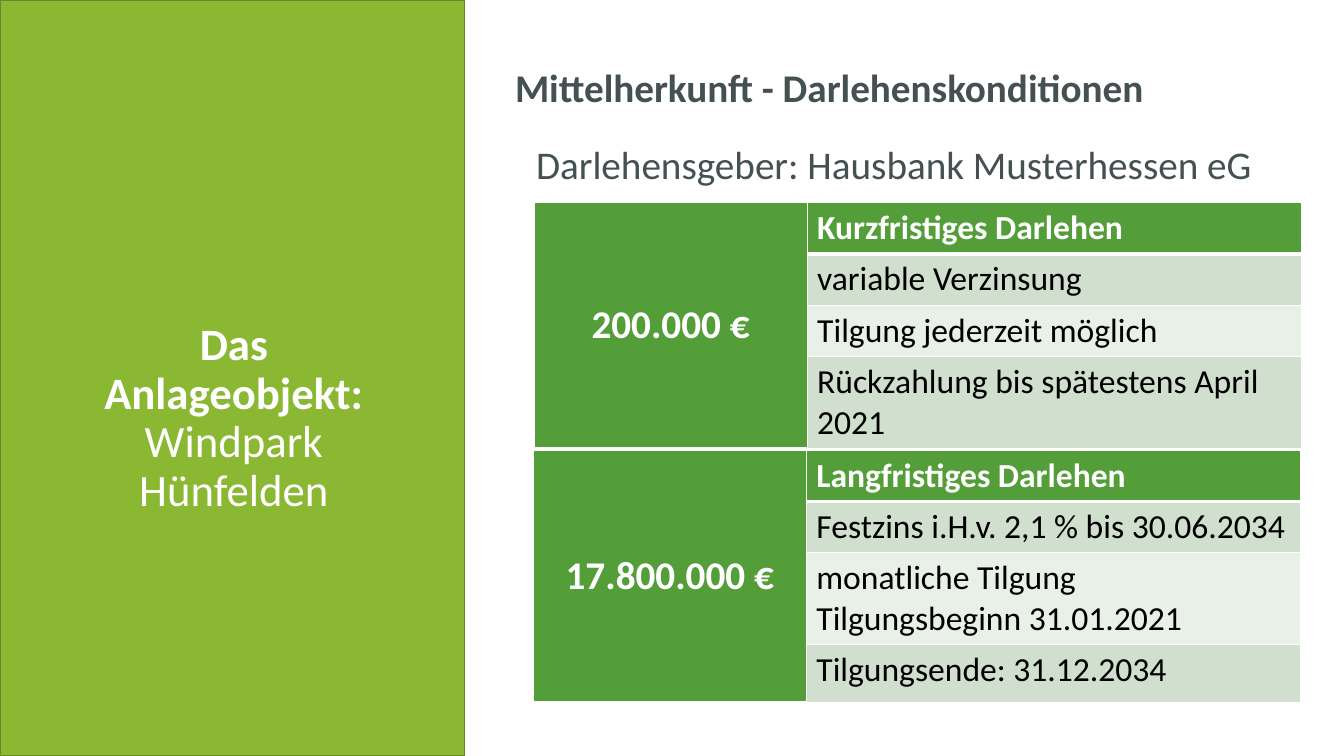
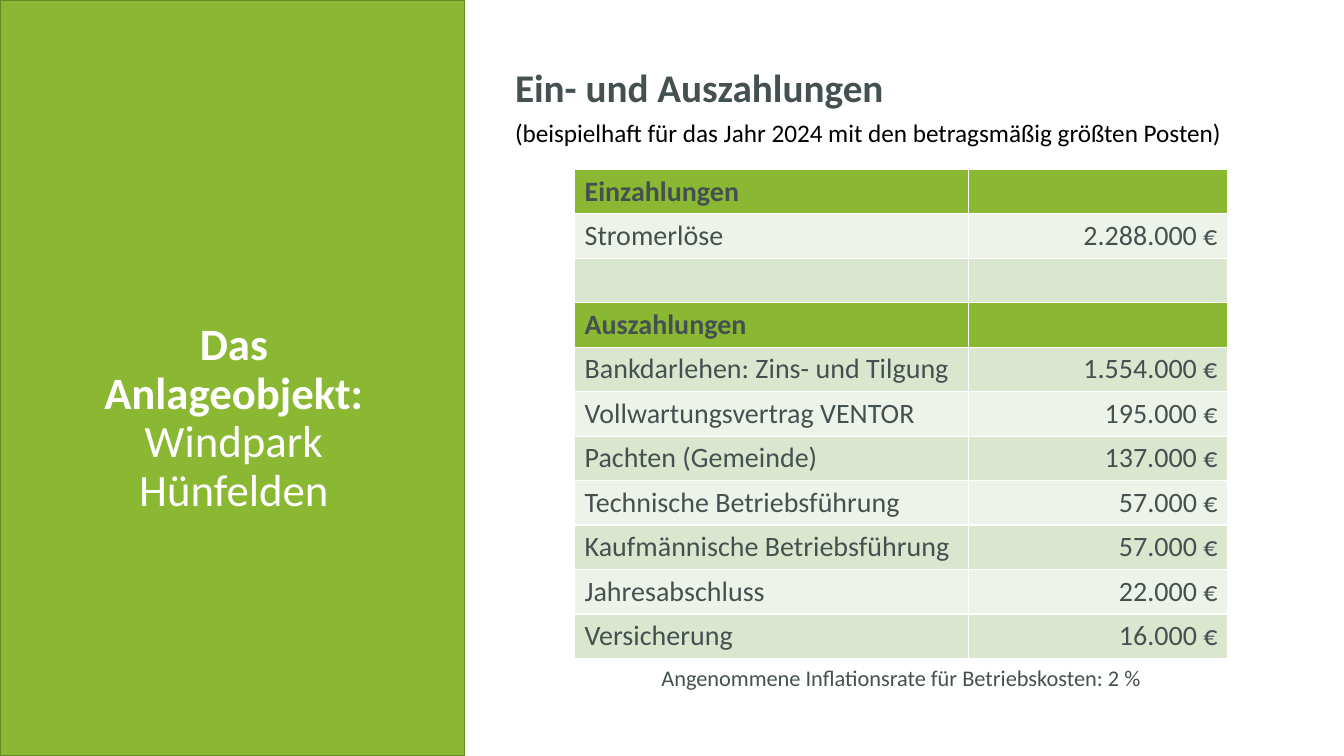
from dataclasses import dataclass

from lxml import etree
from pptx import Presentation
from pptx.dml.color import RGBColor
from pptx.enum import shapes, text
from pptx.oxml import ns
from pptx import util as u


@dataclass(frozen=True)
class Theme:
    font: str = "Calibri"
    lime: str = "8AB833"
    lime_line: str = "668826"
    lime_bands: tuple = ("DAE6CE", "EDF3E8")
    green: str = "549E39"
    green_bands: tuple = ("E9F0E8", "D1DFCE")
    slate: str = "455051"
    white: str = "FFFFFF"
    black: str = "000000"
    panel_size: int = 32
    heading_size: int = 28
    loan_size: int = 24
    payment_size: int = 20
    subtitle_size: int = 18
    note_size: int = 16
    tight: float = 0.9
    rule: int = 1
    thick_rule: int = 3


THEME = Theme()
LEFT = text.PP_ALIGN.LEFT
CENTER = text.PP_ALIGN.CENTER
RIGHT = text.PP_ALIGN.RIGHT
MIDDLE = text.MSO_ANCHOR.MIDDLE
TOP = text.MSO_ANCHOR.TOP

LOANS = [
    (13.46, 5.11, (1.29, 1.29, 1.29, 2.32), "200.000 €", [
        "Kurzfristiges Darlehen",
        "variable Verzinsung",
        "Tilgung jederzeit möglich",
        "Rückzahlung bis spätestens April 2021",
    ]),
    (13.44, 11.35, (1.29, 1.29, 2.32, 1.46), "17.800.000 €", [
        "Langfristiges Darlehen",
        "Festzins i.H.v. 2,1 % bis 30.06.2034",
        "monatliche Tilgung\nTilgungsbeginn 31.01.2021",
        "Tilgungsende: 31.12.2034",
    ]),
]

PAYMENTS = [
    ("Einzahlungen", ""),
    ("Stromerlöse", "2.288.000 €"),
    ("", ""),
    ("Auszahlungen", ""),
    ("Bankdarlehen: Zins- und Tilgung", "1.554.000 €"),
    ("Vollwartungsvertrag VENTOR", "195.000 €"),
    ("Pachten (Gemeinde)", "137.000 €"),
    ("Technische Betriebsführung", "57.000 €"),
    ("Kaufmännische Betriebsführung", "57.000 €"),
    ("Jahresabschluss", "22.000 €"),
    ("Versicherung", "16.000 €"),
]


def rgb(value):
    return RGBColor.from_string(value)


def lengths(*values):
    return [u.Cm(value) for value in values]


def add_run(paragraph, words, size, color, bold=False):
    run = paragraph.add_run()
    run.text = words
    run.font.name = THEME.font
    run.font.size = u.Pt(size)
    run.font.bold = bold
    run.font.color.rgb = rgb(color)


def add_text(slide, box, words, size, color=THEME.slate, bold=False,
             align=LEFT, anchor=TOP, spacing=1.0):
    frame = slide.shapes.add_textbox(*lengths(*box)).text_frame
    frame.word_wrap = True
    frame.vertical_anchor = anchor
    paragraph = frame.paragraphs[0]
    paragraph.alignment = align
    paragraph.line_spacing = spacing
    add_run(paragraph, words, size, color, bold)


def add_heading(slide, words):
    add_text(slide, (12.73, 1.6, 20.29, 1.32), words, THEME.heading_size,
             bold=True, spacing=THEME.tight)


def set_borders(cell, top=THEME.rule, bottom=THEME.rule):
    properties = cell._tc.get_or_add_tcPr()
    widths = {"L": THEME.rule, "R": THEME.rule, "T": top, "B": bottom}
    for side, width in widths.items():
        line = etree.SubElement(properties, ns.qn(f"a:ln{side}"), w=str(u.Pt(width)))
        fill = etree.SubElement(line, ns.qn("a:solidFill"))
        etree.SubElement(fill, ns.qn("a:srgbClr"), val=THEME.white)


def fill_cell(cell, words, fill, size, color, bold=False, align=LEFT,
              anchor=TOP, **borders):
    set_borders(cell, **borders)
    cell.fill.solid()
    cell.fill.fore_color.rgb = rgb(fill)
    cell.vertical_anchor = anchor
    frame = cell.text_frame
    for index, line in enumerate(words.split("\n")):
        paragraph = frame.add_paragraph() if index else frame.paragraphs[0]
        paragraph.alignment = align
        if line:
            add_run(paragraph, line, size, color, bold)


def add_table(slide, left, top, widths, heights):
    box = lengths(left, top, sum(widths), sum(heights))
    table = slide.shapes.add_table(len(heights), len(widths), *box).table
    table.first_row = False
    table.horz_banding = False
    for column, width in zip(table.columns, widths):
        column.width = u.Cm(width)
    for row, height in zip(table.rows, heights):
        row.height = u.Cm(height)
    return table


def add_loan_table(slide, left, top, heights, amount, terms):
    table = add_table(slide, left, top, (6.88, 12.45), heights)
    table.cell(0, 0).merge(table.cell(len(terms) - 1, 0))
    fill_cell(table.cell(0, 0), amount, THEME.green, THEME.heading_size,
              THEME.white, True, CENTER, MIDDLE, bottom=THEME.thick_rule)
    fill_cell(table.cell(0, 1), terms[0], THEME.green, THEME.loan_size,
              THEME.white, True, bottom=THEME.thick_rule)
    for index, term in enumerate(terms[1:], start=1):
        fill_cell(table.cell(index, 1), term, THEME.green_bands[index % 2],
                  THEME.loan_size, THEME.black,
                  top=THEME.thick_rule if index == 1 else THEME.rule)


def add_payment_table(slide):
    table = add_table(slide, 14.48, 4.27, (9.93, 6.53), [1.12] * len(PAYMENTS))
    for index, (label, amount) in enumerate(PAYMENTS):
        is_header = bool(label) and not amount
        fill = THEME.lime if is_header else THEME.lime_bands[index % 2]
        for column, (words, align) in enumerate(((label, LEFT), (amount, RIGHT))):
            fill_cell(table.cell(index, column), words, fill,
                      THEME.payment_size, THEME.slate, is_header, align)


def add_panel_to_layout(layout, slide):
    panel = slide.shapes.add_shape(shapes.MSO_SHAPE.RECTANGLE,
                                   *lengths(0, 0, 11.71, 19.05))
    panel.shadow.inherit = False
    panel.fill.solid()
    panel.fill.fore_color.rgb = rgb(THEME.lime)
    panel.line.color.rgb = rgb(THEME.lime_line)
    panel.line.width = u.Pt(1)
    layout.shapes.element.insert(2, panel.element)


def format_title(slide):
    title = slide.shapes.title
    title.left, title.top, title.width, title.height = lengths(1.45, 6.76, 8.89, 7.6)
    frame = title.text_frame
    frame.word_wrap = True
    frame.auto_size = text.MSO_AUTO_SIZE.NONE
    frame.vertical_anchor = MIDDLE
    paragraph = frame.paragraphs[0]
    paragraph.alignment = CENTER
    paragraph.line_spacing = THEME.tight
    add_run(paragraph, "Das Anlageobjekt: ", THEME.panel_size, THEME.white, True)
    add_run(paragraph, "Windpark Hünfelden", THEME.panel_size, THEME.white)


def build_loans(slide):
    add_heading(slide, "Mittelherkunft - Darlehenskonditionen")
    add_text(slide, (13.26, 2.9, 19.33, 2.62),
             "Darlehensgeber: Hausbank Musterhessen eG", THEME.heading_size,
             anchor=MIDDLE, spacing=THEME.tight)
    for loan in LOANS:
        add_loan_table(slide, *loan)


def build_payments(slide):
    add_heading(slide, "Ein- und Auszahlungen")
    add_text(slide, (12.73, 2.84, 19.79, 1.02),
             "(beispielhaft für das Jahr 2024 mit den betragsmäßig größten Posten)",
             THEME.subtitle_size, THEME.black)
    add_payment_table(slide)
    add_text(slide, (14.48, 16.61, 16.46, 0.94),
             "Angenommene Inflationsrate für Betriebskosten: 2 %",
             THEME.note_size, align=CENTER)


def main():
    presentation = Presentation()
    presentation.slide_width, presentation.slide_height = lengths(33.87, 19.05)
    layout = presentation.slide_layouts.get_by_name("Title Only")
    for index, build in enumerate((build_loans, build_payments)):
        slide = presentation.slides.add_slide(layout)
        if index == 0:
            add_panel_to_layout(layout, slide)
        format_title(slide)
        build(slide)
    presentation.save("out.pptx")


if __name__ == "__main__":
    main()
